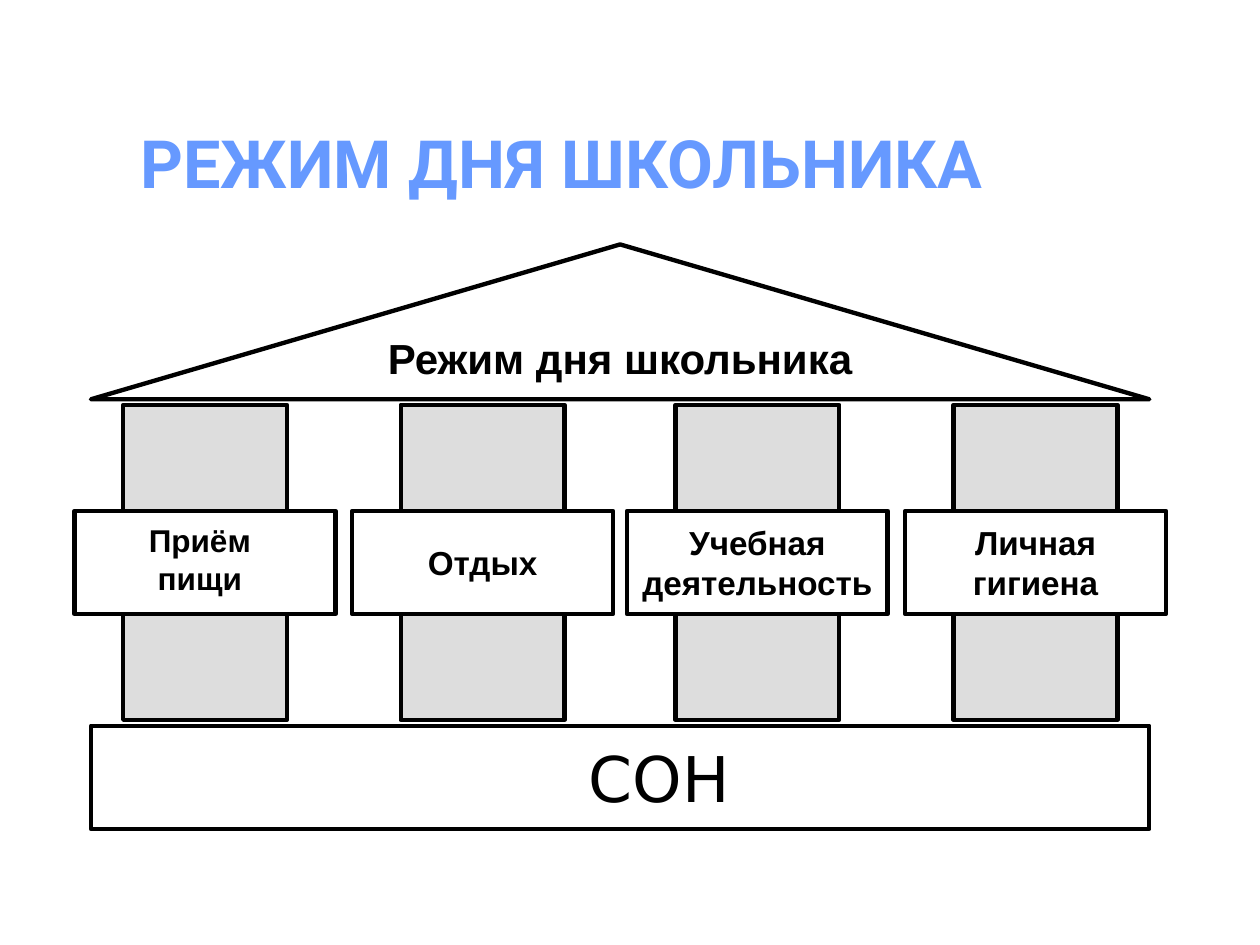
"""Build a slide that shows a schoolchild's daily routine as a temple."""
from pptx import Presentation
from pptx.dml.color import RGBColor
from pptx.enum import shapes, text
from pptx.util import Pt

TITLE = "РЕЖИМ ДНЯ ШКОЛЬНИКА"
ROOF = "Режим дня школьника"
BASE = "СОН"
PILLARS = [
    {"label": "Приём\nпищи", "left": 70.4, "size": 18, "anchor": "TOP", "right_inset": 13},
    {"label": "Отдых", "left": 229},
    {"label": "Учебная\nдеятельность", "left": 386},
    {"label": "Личная гигиена", "left": 545},
]
COLORS = {"title": "6699FF", "ink": "000000", "pillar": "DDDDDD", "plaque": "FFFFFF"}

PILLAR_TOP, PILLAR_WIDTH, PILLAR_HEIGHT = 231.4, 93.6, 180
PLAQUE_WIDTH, PLAQUE_HEIGHT = 149, 59
TEMPLE_LEFT, TEMPLE_WIDTH = 52, 604.8


def color(name):
    return RGBColor.from_string(COLORS[name])


def write(box, words, size, font="Arial", ink="ink", bold=True, anchor="MIDDLE",
          insets=(7.2, 3.6, 7.2, 3.6)):
    frame = box.text_frame
    frame.word_wrap = True
    frame.text = words
    frame.vertical_anchor = text.MSO_ANCHOR[anchor]
    frame.margin_left, frame.margin_top, frame.margin_right, frame.margin_bottom = map(Pt, insets)
    for line in frame.paragraphs:
        line.alignment = text.PP_ALIGN.CENTER
        for run in line.runs:
            run.font.name, run.font.size, run.font.bold = font, Pt(size), bold
            run.font.color.rgb = color(ink)


def add_block(slide, kind, left, top, width, height, fill=None):
    block = slide.shapes.add_shape(kind, Pt(left), Pt(top), Pt(width), Pt(height))
    block.shadow.inherit = False
    if fill:
        block.fill.solid()
        block.fill.fore_color.rgb = color(fill)
    else:
        block.fill.background()
    block.line.color.rgb = color("ink")
    block.line.width = Pt(2.5)
    return block


def main():
    deck = Presentation()
    deck.slide_width, deck.slide_height = Pt(720), Pt(540)
    slide = deck.slides.add_slide(deck.slide_layouts[6])
    rectangle = shapes.MSO_SHAPE.RECTANGLE

    title = slide.shapes.add_textbox(Pt(36), Pt(25.2), Pt(570.2), Pt(90))
    write(title, TITLE, 38, "Roboto", "title", anchor="BOTTOM", insets=(3.6, 0, 3.6, 0))

    base = add_block(slide, rectangle, TEMPLE_LEFT, 414.7, TEMPLE_WIDTH, PLAQUE_HEIGHT)
    write(base, BASE, 36, "DejaVu Sans", bold=False, insets=(52, 3.6, 7.2, 3.6))

    roof = add_block(slide, shapes.MSO_SHAPE.ISOSCELES_TRIANGLE,
                     TEMPLE_LEFT, 139.7, TEMPLE_WIDTH, 88.5)
    write(roof, ROOF, 24, anchor="TOP", insets=(7.2, 6, 7.2, 3.6))

    plaque_top = PILLAR_TOP + (PILLAR_HEIGHT - PLAQUE_HEIGHT) / 2
    for pillar in PILLARS:
        left = pillar["left"]
        add_block(slide, rectangle, left, PILLAR_TOP, PILLAR_WIDTH, PILLAR_HEIGHT, "pillar")
        plaque = add_block(slide, rectangle, left - (PLAQUE_WIDTH - PILLAR_WIDTH) / 2,
                           plaque_top, PLAQUE_WIDTH, PLAQUE_HEIGHT, "plaque")
        write(plaque, pillar["label"], pillar.get("size", 19),
              anchor=pillar.get("anchor", "MIDDLE"),
              insets=(7.2, 6, pillar.get("right_inset", 7.2), 6))

    deck.save("out.pptx")


if __name__ == "__main__":
    main()
